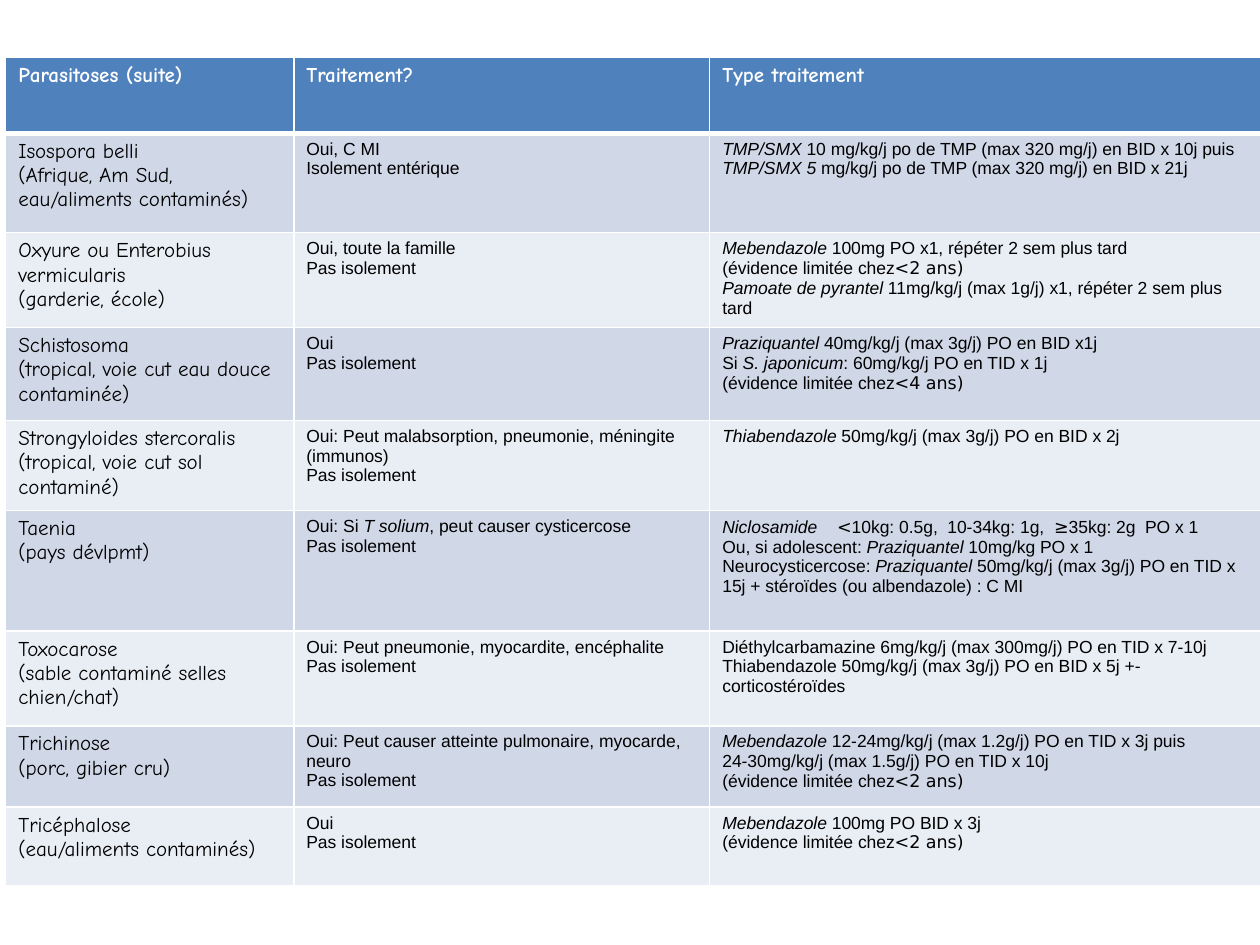
from pptx import Presentation
from pptx.dml.color import RGBColor
from pptx.oxml import parse_xml
from pptx.oxml.ns import nsdecls
from pptx.util import Pt

# Content: *...* is italic, ~...~ uses the symbol font
HEADER = (["Parasitoses (suite)"], ["Traitement?"], ["Type traitement"])
BODY = [
    (["Isospora belli", "(Afrique, Am Sud, eau/aliments contaminés)"],
     ["Oui, C MI", "Isolement entérique"],
     ["*TMP/SMX *10 mg/kg/j po de TMP (max 320 mg/j) en BID x 10j puis",
      "*TMP/SMX 5* mg/kg/j po de TMP (max 320 mg/j) en BID x 21j"]),
    (["Oxyure ou Enterobius vermicularis", "(garderie, école)"],
     ["Oui, toute la famille", "Pas isolement"],
     ["*Mebendazole* 100mg PO x1, répéter 2 sem plus tard",
      "(évidence limitée chez~<2 ans)~",
      "*Pamoate de pyrantel* 11mg/kg/j (max 1g/j) x1, répéter 2 sem plus tard"]),
    (["Schistosoma", "(tropical, voie cut eau douce contaminée)"],
     ["Oui", "Pas isolement"],
     ["*Praziquantel* 40mg/kg/j (max 3g/j) PO en BID x1j",
      "Si *S. japonicum*: 60mg/kg/j PO en TID x 1j",
      "(évidence limitée chez~<4 ans)~"]),
    (["Strongyloides stercoralis", "(tropical, voie cut sol contaminé)"],
     ["Oui: Peut malabsorption, pneumonie, méningite (immunos)", "Pas isolement"],
     ["*Thiabendazole* 50mg/kg/j (max 3g/j) PO en BID x 2j"]),
    (["Taenia", "(pays dévlpmt)"],
     ["Oui: Si *T solium*, peut causer cysticercose", "Pas isolement"],
     ["*Niclosamide*\t~<~10kg: 0.5g,\t10-34kg: 1g,\t~≥~35kg: 2g\tPO x 1",
      "Ou, si adolescent: *Praziquantel *10mg/kg PO x 1",
      "Neurocysticercose: *Praziquantel* 50mg/kg/j (max 3g/j) PO en TID x 15j"
      " + stéroïdes (ou albendazole) : C MI"]),
    (["Toxocarose", "(sable contaminé selles chien/chat)"],
     ["Oui: Peut pneumonie, myocardite, encéphalite", "Pas isolement"],
     ["Diéthylcarbamazine 6mg/kg/j (max 300mg/j) PO en TID x 7-10j",
      "Thiabendazole 50mg/kg/j (max 3g/j) PO en BID x 5j +- corticostéroïdes"]),
    (["Trichinose", "(porc, gibier cru)"],
     ["Oui: Peut causer atteinte pulmonaire, myocarde, neuro", "Pas isolement"],
     ["*Mebendazole* 12-24mg/kg/j (max 1.2g/j) PO en TID x 3j puis",
      "24-30mg/kg/j (max 1.5g/j) PO en TID x 10j",
      "(évidence limitée chez~<2 ans)~"]),
    (["Tricéphalose", "(eau/aliments contaminés)"],
     ["Oui", "Pas isolement"],
     ["*Mebendazole* 100mg PO BID x 3j", "(évidence limitée chez~<2 ans)~"]),
]

# Geometry in points
LEFT, TOP = 3.3, 33
COLS = [164.6, 237.7, 314.6]
ROWS = [43.2, 56.8, 54.2, 53.2, 51.4, 68.8, 54.2, 46.4, 45]
DOSE_TABS = [65.6, 128.6, 189.6, 241.6]

# Formats
HEAD_FILL, BAND_FILLS = "4F81BD", ("D0D8E8", "E9EDF4")
SYMBOL_FONT = "DejaVu Sans"
HEAD = {"name": "Comic Neue", "size": Pt(12), "bold": True}
NAME = {**HEAD, "bold": False}
DETAIL = {"name": "Arial", "size": Pt(10), "bold": False}


def paint(color_format, hex_color):
    color_format.rgb = RGBColor.from_string(hex_color)


def add_run(p, content, style, color):
    r = p.add_run()
    r.text = content
    for key, value in style.items():
        setattr(r.font, key, value)
    r.font.fill.solid()
    paint(r.font.fill.fore_color, color)


def write_line(p, line, style, color):
    for i, part in enumerate(line.split("*")):
        for j, piece in enumerate(part.split("~")):
            if piece:
                look = {**style, "italic": i % 2 == 1}
                if j % 2:
                    look["name"] = SYMBOL_FONT
                add_run(p, piece, look, color)
    if "\t" in line:
        stops = "".join(f'<a:tab pos="{Pt(x)}" algn="l"/>' for x in DOSE_TABS)
        p._p.get_or_add_pPr().append(
            parse_xml(f'<a:tabLst {nsdecls("a")}>{stops}</a:tabLst>'))


def set_borders(cell, row):
    widths = {"L": 1, "R": 1, "T": 3 if row == 1 else 1, "B": 3 if row == 0 else 1}
    for side, width in widths.items():
        cell._tc.get_or_add_tcPr().append(parse_xml(
            f'<a:ln{side} {nsdecls("a")} w="{Pt(width)}"><a:solidFill>'
            f'<a:srgbClr val="FFFFFF"/></a:solidFill></a:ln{side}>'))


def fill_cell(cell, lines, row, col):
    set_borders(cell, row)
    cell.fill.solid()
    paint(cell.fill.fore_color, BAND_FILLS[(row - 1) % 2] if row else HEAD_FILL)
    style = HEAD if row == 0 else NAME if col == 0 else DETAIL
    tf = cell.text_frame
    for i, line in enumerate(lines):
        p = tf.add_paragraph() if i else tf.paragraphs[0]
        write_line(p, line, style, "000000" if row else "FFFFFF")


def main():
    prs = Presentation()
    prs.slide_width, prs.slide_height = Pt(720), Pt(540)
    s = prs.slides.add_slide(prs.slide_layouts[6])

    # Treatment table
    table = s.shapes.add_table(len(ROWS), len(COLS), Pt(LEFT), Pt(TOP),
                               Pt(sum(COLS)), Pt(sum(ROWS))).table
    for column, width in zip(table.columns, COLS):
        column.width = Pt(width)
    for row, height in zip(table.rows, ROWS):
        row.height = Pt(height)
    for r, cells in enumerate([HEADER, *BODY]):
        for c, lines in enumerate(cells):
            fill_cell(table.cell(r, c), lines, r, c)

    prs.save("out.pptx")


if __name__ == "__main__":
    main()
